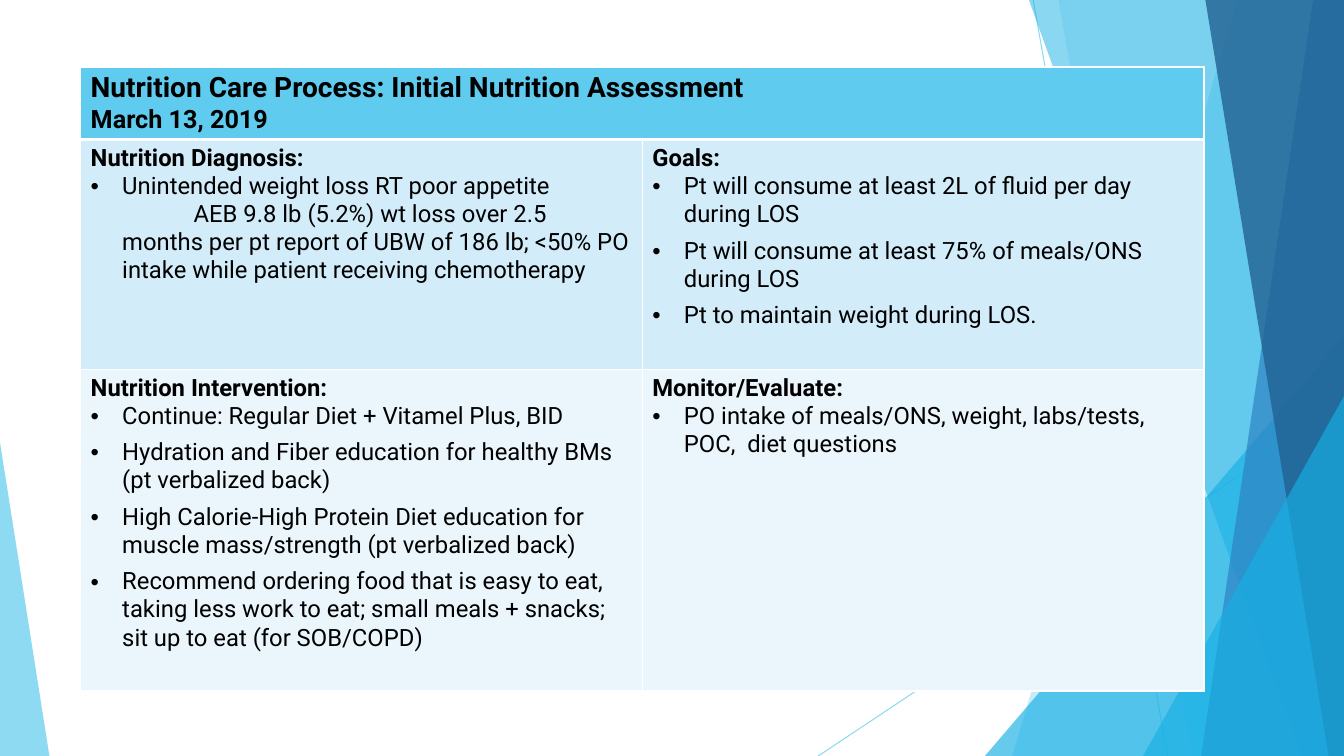
import pptx
import pptx.util
import pptx.dml.color
import pptx.enum.shapes
import pptx.oxml.ns
from lxml import etree

Pt = pptx.util.Pt
RGBColor = pptx.dml.color.RGBColor
MSO_SHAPE = pptx.enum.shapes.MSO_SHAPE
qn = pptx.oxml.ns.qn

SKY = RGBColor(0x5F, 0xCB, 0xEF)
CYAN = RGBColor(0x17, 0xB0, 0xE4)
BLUE = RGBColor(0x2E, 0x83, 0xC3)
NAVY = RGBColor(0x22, 0x62, 0x92)
BAND_1 = RGBColor(0xD2, 0xEC, 0xF9)
BAND_2 = RGBColor(0xEA, 0xF6, 0xFC)
WHITE = RGBColor(0xFF, 0xFF, 0xFF)
BLACK = RGBColor(0, 0, 0)
FONT = "Roboto"
WIDTH, HEIGHT = 960, 540

HEADER = [("Nutrition Care Process: Initial Nutrition Assessment", 20), ("March 13, 2019", 18)]
SECTIONS = [
    [
        ("Nutrition Diagnosis:", [
            ("Unintended weight loss RT poor appetite", 0),
            ("AEB 9.8 lb (5.2%) wt loss over 2.5\vmonths per pt report of UBW of 186 lb; <50% PO "
             "intake while patient receiving chemotherapy", 6),
        ]),
        ("Goals:", [
            ("Pt will consume at least 2L of fluid per day during LOS", 6),
            ("Pt will consume at least 75% of meals/ONS during LOS", 6),
            ("Pt to maintain weight during LOS.", 6),
        ]),
    ],
    [
        ("Nutrition Intervention:", [
            ("Continue: Regular Diet + Vitamel Plus, BID", 6),
            ("Hydration and Fiber education for healthy BMs (pt verbalized back)", 6),
            ("High Calorie-High Protein Diet education for muscle mass/strength (pt verbalized back)", 6),
            ("Recommend ordering food that is easy to eat, taking less work to eat; small meals + snacks; "
             "sit up to eat (for SOB/COPD)", 6),
        ]),
        ("Monitor/Evaluate:", [
            ("PO intake of meals/ONS, weight, labs/tests, POC,  diet questions", 0),
        ]),
    ],
]
CONTINUATION = "AEB"
BANDS = [BAND_1, BAND_2]
ROW_HEIGHTS = [51, 164, 230]
TABLE_LEFT, TABLE_TOP, COLUMN_WIDTH = 57.6, 47.8, 401.2
HANGING, CONTINUATION_INDENT = 22.5, 51

RAYS = [(738, 0, 834, 540), (960, 290, 584.5, 540)]
FACETS = [
    ("shard", (884, 723), SKY, 36),
    ("shard", (756, 852), SKY, 20),
    ("triangle", (703.5, 240, 256.5, 300, 1), CYAN, 66),
    ("shard", (735, 929.5), CYAN, 50),
    ("shard", (938, 858), BLUE, 70),
    ("shard", (861, 949), NAVY, 80),
    ("triangle", (816.5, 283, 143.5, 257, 1), CYAN, 66),
    ("triangle", (0, 316, 35.3, 224, 0), SKY, 70),
]


def set_alpha(element, percent):
    for color in element.iter(qn("a:srgbClr")):
        etree.SubElement(color, qn("a:alpha")).set("val", str(percent * 1000))


def add_ray(s, ends):
    sp = s.shapes.add_connector(pptx.enum.shapes.MSO_CONNECTOR.STRAIGHT, *map(Pt, ends))
    sp.line.color.rgb = SKY
    sp.line.width = Pt(0.75)
    set_alpha(sp.line._ln, 70)
    etree.SubElement(sp._element.spPr, qn("a:effectLst"))


def add_facet(s, kind, geometry, color, alpha):
    if kind == "shard":
        top_x, bottom_x = geometry
        builder = s.shapes.build_freeform(Pt(top_x), Pt(0))
        corners = [(WIDTH, 0), (WIDTH, HEIGHT), (bottom_x, HEIGHT)]
        builder.add_line_segments([(Pt(x), Pt(y)) for x, y in corners], close=True)
        sp = builder.convert_to_shape()
    else:
        *box, apex = geometry
        sp = s.shapes.add_shape(MSO_SHAPE.ISOSCELES_TRIANGLE, *map(Pt, box))
        sp.adjustments[0] = apex
    sp.shadow.inherit = False
    sp.fill.solid()
    sp.fill.fore_color.rgb = color
    sp.line.fill.background()
    set_alpha(sp._element.spPr, alpha)


def style_cell(cell, color, top, bottom):
    tcPr = cell._tc.get_or_add_tcPr()
    for side, width in (("L", 1), ("R", 1), ("T", top), ("B", bottom)):
        ln = etree.SubElement(tcPr, qn("a:ln" + side))
        ln.set("w", str(Pt(width)))
        fill = etree.SubElement(ln, qn("a:solidFill"))
        etree.SubElement(fill, qn("a:srgbClr")).set("val", str(WHITE))
    cell.fill.solid()
    cell.fill.fore_color.rgb = color


def add_text(tf, text, size, bold, first=False):
    p = tf.paragraphs[0] if first else tf.add_paragraph()
    p.text = text
    p.font.name = FONT
    p.font.size = Pt(size)
    p.font.bold = bold
    p.font.color.rgb = BLACK
    return p


def indent(p, bulleted):
    pPr = p._p.get_or_add_pPr()
    pPr.set("marL", str(Pt(HANGING)))
    pPr.set("indent", str(Pt(-HANGING if bulleted else CONTINUATION_INDENT)))
    if bulleted:
        bullet_font = pPr.makeelement(qn("a:buFont"), {"typeface": "Arial"})
        bullet = pPr.makeelement(qn("a:buChar"), {"char": "•"})
        defRPr = pPr.find(qn("a:defRPr"))
        defRPr.addprevious(bullet_font)
        defRPr.addprevious(bullet)


def add_care_table(s):
    frame = s.shapes.add_table(len(ROW_HEIGHTS), 2, Pt(TABLE_LEFT), Pt(TABLE_TOP),
                               Pt(2 * COLUMN_WIDTH), Pt(sum(ROW_HEIGHTS)))
    table = frame.table
    for column in table.columns:
        column.width = Pt(COLUMN_WIDTH)
    for row, height in zip(table.rows, ROW_HEIGHTS):
        row.height = Pt(height)

    table.cell(0, 0).merge(table.cell(0, 1))
    for c in range(2):
        style_cell(table.cell(0, c), SKY, 1, 3)
    for i, (text, size) in enumerate(HEADER):
        add_text(table.cell(0, 0).text_frame, text, size, True, i == 0)

    for r, (sections, color) in enumerate(zip(SECTIONS, BANDS), 1):
        for c, (heading, items) in enumerate(sections):
            cell = table.cell(r, c)
            style_cell(cell, color, 3 if r == 1 else 1, 1)
            add_text(cell.text_frame, heading, 17, True, True)
            for text, space_after in items:
                p = add_text(cell.text_frame, text, 17, False)
                p.space_after = Pt(space_after)
                indent(p, not text.startswith(CONTINUATION))


def main():
    prs = pptx.Presentation()
    prs.slide_width, prs.slide_height = Pt(WIDTH), Pt(HEIGHT)
    s = prs.slides.add_slide(prs.slide_layouts[6])
    for ends in RAYS:
        add_ray(s, ends)
    for facet in FACETS:
        add_facet(s, *facet)
    add_care_table(s)
    prs.save("out.pptx")


if __name__ == "__main__":
    main()
